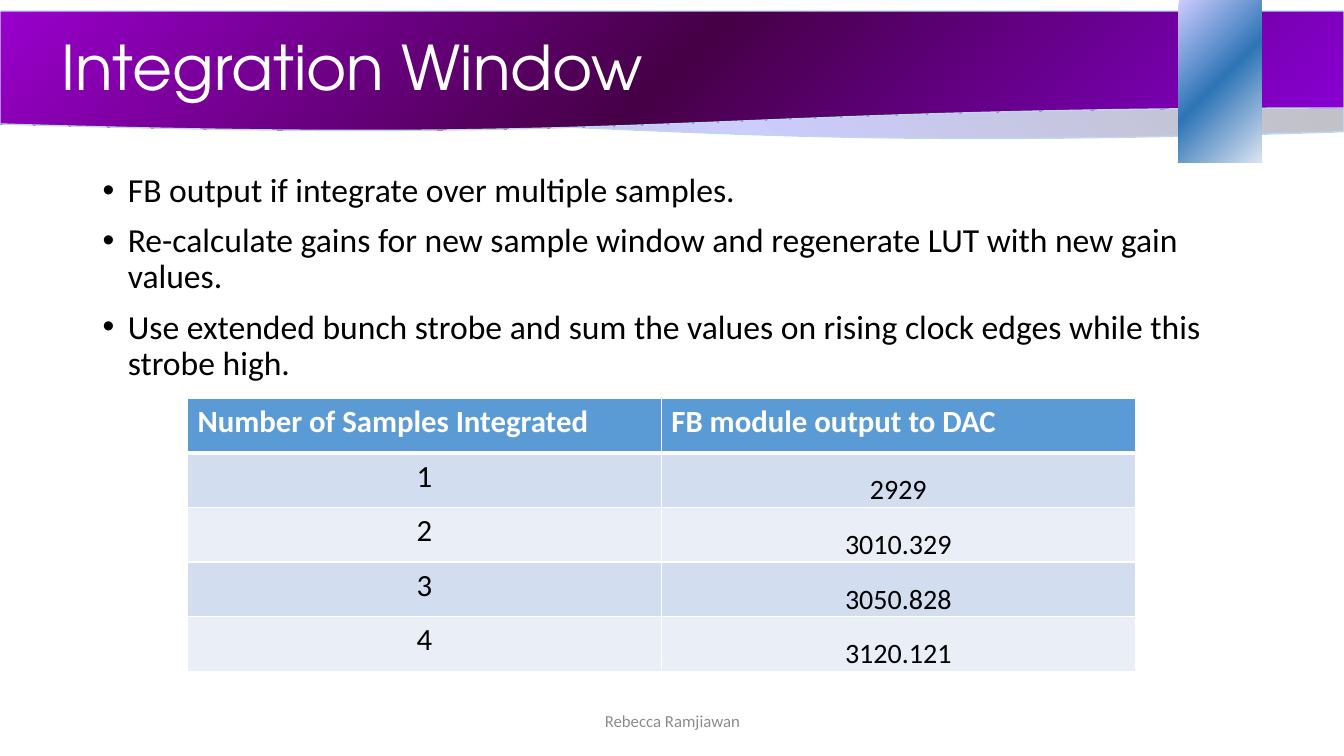
from lxml import etree
from pptx import Presentation
from pptx.dml.color import RGBColor
from pptx.enum.shapes import MSO_SHAPE as Shape
from pptx.enum.text import MSO_ANCHOR as Anchor, PP_ALIGN as Align
from pptx.oxml import parse_xml
from pptx.oxml.ns import nsdecls, qn
from pptx.util import Inches, Pt

# Content
TITLE = "Integration Window"
AUTHOR = "Rebecca Ramjiawan"
BULLETS = [
    "FB output if integrate over multiple samples.",
    "Re-calculate gains for new sample window and regenerate LUT with new gain values.",
    "Use extended bunch strobe and sum the values on rising clock edges while this strobe high.",
]
TABLE_ROWS = [
    ("Number of Samples Integrated", "FB module output to DAC"),
    ("1", "2929"),
    ("2", "3010.329"),
    ("3", "3050.828"),
    ("4", "3120.121"),
]

THEME = {
    "title_font": "TeX Gyre Adventor", "body_font": "Calibri",
    "title_size": 44, "body_size": 24, "table_size": 22, "value_size": 20, "footer_size": 12,
    "white": "FFFFFF", "text": "000000", "footer": "8C8C8C", "wave_line": "BDD7EE",
    "header_fill": "5B9BD5", "bands": ("D2DEEF", "EAEFF7"),
    "back_wave": ("A6A6A6", "CCCCFF", "BFBFBF"),
    "front_wave": ("8A00D6", "460046", "9900CC"),
    "ribbon": ("DAE3F3", "2E75B6", "CCCCFF"),
}
DIAGONAL = '<a:lin ang="13500000" scaled="0"/>'
FROM_CORNER = '<a:path path="circle"><a:fillToRect l="100000" t="100000"/></a:path>'


def add_decoration(slide, preset, box, colors, direction, outlined):
    shape = slide.shapes.add_shape(preset, *map(Inches, box))
    shape.shadow.inherit = False
    shape.fill.background()
    properties = shape._element.spPr
    stops = "".join(
        f'<a:gs pos="{index * 50000}"><a:srgbClr val="{color}"/></a:gs>'
        for index, color in enumerate(colors))
    gradient = parse_xml(
        f'<a:gradFill {nsdecls("a")} rotWithShape="1"><a:gsLst>{stops}</a:gsLst>{direction}</a:gradFill>')
    properties.replace(properties.find(qn("a:noFill")), gradient)
    if outlined:
        shape.line.color.rgb = RGBColor.from_string(THEME["wave_line"])
        shape.line.width = Pt(1)
    else:
        shape.line.fill.background()
    return shape


def add_text_box(slide, box, anchor=Anchor.TOP):
    frame = slide.shapes.add_textbox(*map(Inches, box)).text_frame
    frame.word_wrap = True
    frame.vertical_anchor = anchor
    return frame


def add_run(paragraph, text, size, color, font="body_font", bold=False):
    run = paragraph.add_run()
    run.text = text
    run.font.name = THEME[font]
    run.font.size = Pt(THEME[size])
    run.font.bold = bold
    run.font.color.rgb = RGBColor.from_string(THEME[color])


def add_bullet(paragraph):
    properties = paragraph._p.get_or_add_pPr()
    properties.set("marL", str(Inches(0.25)))
    properties.set("indent", str(-Inches(0.25)))
    etree.SubElement(properties, qn("a:buFont")).set("typeface", "Arial")
    etree.SubElement(properties, qn("a:buChar")).set("char", "•")


def set_borders(cell, top, bottom):
    properties = cell._tc.get_or_add_tcPr()
    for index, (side, width) in enumerate((("L", 1), ("R", 1), ("T", top), ("B", bottom))):
        properties.insert(index, parse_xml(
            f'<a:ln{side} {nsdecls("a")} w="{Pt(width)}"><a:solidFill>'
            f'<a:srgbClr val="{THEME["white"]}"/></a:solidFill></a:ln{side}>'))


def fill_cell(cell, text, row, column):
    paragraph = cell.text_frame.paragraphs[0]
    is_header = row == 0
    cell.fill.solid()
    fill = THEME["header_fill"] if is_header else THEME["bands"][(row - 1) % 2]
    cell.fill.fore_color.rgb = RGBColor.from_string(fill)
    set_borders(cell, top=3 if row == 1 else 1, bottom=3 if is_header else 1)
    if is_header:
        paragraph.alignment = Align.JUSTIFY
        add_run(paragraph, text, "table_size", "white", bold=True)
        return
    paragraph.alignment = Align.CENTER
    if column == 1:
        cell.vertical_anchor = Anchor.BOTTOM
        cell.margin_left = cell.margin_right = cell.margin_top = Inches(0.01)
        cell.margin_bottom = 0
    add_run(paragraph, text, "value_size" if column == 1 else "table_size", "text")


def main():
    presentation = Presentation()
    presentation.slide_width, presentation.slide_height = Inches(13.33), Inches(7.5)
    slide = presentation.slides.add_slide(presentation.slide_layouts[6])

    # Banner waves and ribbon
    back_wave = add_decoration(slide, Shape.FLOWCHART_DOCUMENT, (0, 0.13, 13.33, 1.26),
                               THEME["back_wave"], DIAGONAL, True)
    back_wave._element.spPr.xfrm.set("flipH", "1")
    add_decoration(slide, Shape.FLOWCHART_DOCUMENT, (0, 0.11, 13.33, 1.2),
                   THEME["front_wave"], DIAGONAL, True)
    add_decoration(slide, Shape.RECTANGLE, (11.69, 0, 0.82, 1.61),
                   THEME["ribbon"], FROM_CORNER, False)

    # Bullets
    body = add_text_box(slide, (0.92, 1.67, 11.5, 5.09))
    for index, text in enumerate(BULLETS):
        paragraph = body.add_paragraph() if index else body.paragraphs[0]
        add_bullet(paragraph)
        paragraph.line_spacing = 0.9
        paragraph.space_before = Pt(10 if index else 0)
        add_run(paragraph, text, "body_size", "text")

    # Footer
    paragraph = add_text_box(slide, (4.42, 6.95, 4.5, 0.4), Anchor.MIDDLE).paragraphs[0]
    paragraph.alignment = Align.CENTER
    add_run(paragraph, AUTHOR, "footer_size", "footer")

    # Title
    paragraph = add_text_box(slide, (0.51, 0.12, 11.5, 1.16), Anchor.MIDDLE).paragraphs[0]
    paragraph.line_spacing = 0.9
    add_run(paragraph, TITLE, "title_size", "white", font="title_font")

    # Table of results
    table = slide.shapes.add_table(len(TABLE_ROWS), len(TABLE_ROWS[0]), Inches(1.86),
                                   Inches(3.95), Inches(9.4), Inches(2.71)).table
    for row, texts in enumerate(TABLE_ROWS):
        for column, text in enumerate(texts):
            fill_cell(table.cell(row, column), text, row, column)

    presentation.save("out.pptx")


if __name__ == "__main__":
    main()
